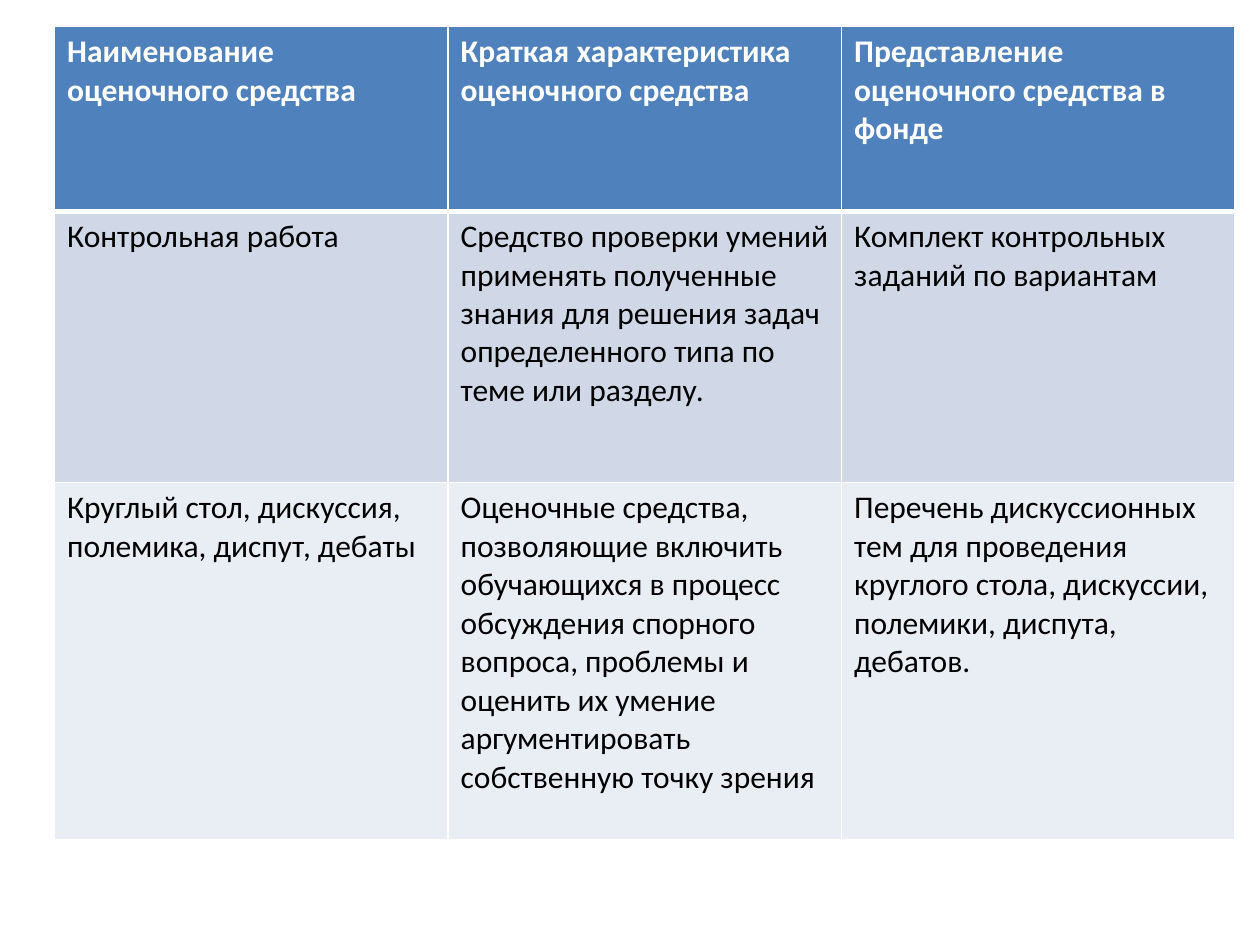
from dataclasses import dataclass

from lxml import etree
from pptx import Presentation
from pptx.dml.color import RGBColor
from pptx.oxml.ns import qn
from pptx.util import Cm, Pt


@dataclass(frozen=True)
class Theme:
    font: str = "Calibri"
    text_size: int = 18
    header_text: str = "FFFFFF"
    body_text: str = "000000"
    border: str = "FFFFFF"
    row_fills: tuple = ("4F81BD", "D0D8E8", "E9EDF4")


theme = Theme()


def write_text(cell, text, color, bold=False):
    """Fill a cell with text; a newline becomes a line break."""
    paragraph = cell.text_frame.paragraphs[0]
    paragraph.text = text.replace("\n", "\v")
    for run in paragraph.runs:
        run.font.name = theme.font
        run.font.size = Pt(theme.text_size)
        run.font.bold = bold
        run.font.color.rgb = RGBColor.from_string(color)


def set_borders(cell, bottom_width):
    """Draw all four cell borders; they precede the fill in the cell XML."""
    properties = cell._tc.get_or_add_tcPr()
    widths = {"a:lnL": 1, "a:lnR": 1, "a:lnT": 1, "a:lnB": bottom_width}
    for position, (tag, width) in enumerate(widths.items()):
        line = etree.Element(qn(tag), w=str(Pt(width)))
        fill = etree.SubElement(line, qn("a:solidFill"))
        etree.SubElement(fill, qn("a:srgbClr"), val=theme.border)
        properties.insert(position, line)


# Slide
presentation = Presentation()
presentation.slide_width = Cm(25.4)
presentation.slide_height = Cm(19.05)
slide = presentation.slides.add_slide(presentation.slide_layouts[6])

# Table content, header first
rows = [
    (
        "Наименование \nоценочного средства",
        "Краткая характеристика оценочного средства",
        "Представление оценочного средства в фонде",
    ),
    (
        "Контрольная работа",
        "Средство проверки умений применять полученные знания для решения "
        "задач определенного типа по теме или разделу. ",
        "Комплект контрольных заданий по вариантам",
    ),
    (
        "Круглый стол, дискуссия, полемика, диспут, дебаты",
        "Оценочные средства, позволяющие включить обучающихся в процесс "
        "обсуждения спорного вопроса, проблемы и оценить их умение "
        "аргументировать собственную точку зрения",
        "Перечень дискуссионных тем для проведения круглого стола, "
        "дискуссии, полемики, диспута, дебатов.",
    ),
]
row_heights = [3.73, 5.47, 7.2]

# Table grid
table = slide.shapes.add_table(
    len(rows), len(rows[0]), Cm(1.1), Cm(0.53), Cm(23.8), Cm(sum(row_heights))
).table
for row, height in zip(table.rows, row_heights):
    row.height = Cm(height)

# Cells
for row_index, texts in enumerate(rows):
    is_header = row_index == 0
    for column_index, text in enumerate(texts):
        cell = table.cell(row_index, column_index)
        cell.fill.solid()
        cell.fill.fore_color.rgb = RGBColor.from_string(theme.row_fills[row_index])
        set_borders(cell, bottom_width=3 if is_header else 1)
        color = theme.header_text if is_header else theme.body_text
        write_text(cell, text, color=color, bold=is_header)

        # The row below the header shares its thick border
        if row_index == 1:
            cell._tc.tcPr.find(qn("a:lnT")).set("w", str(Pt(3)))

presentation.save("out.pptx")
